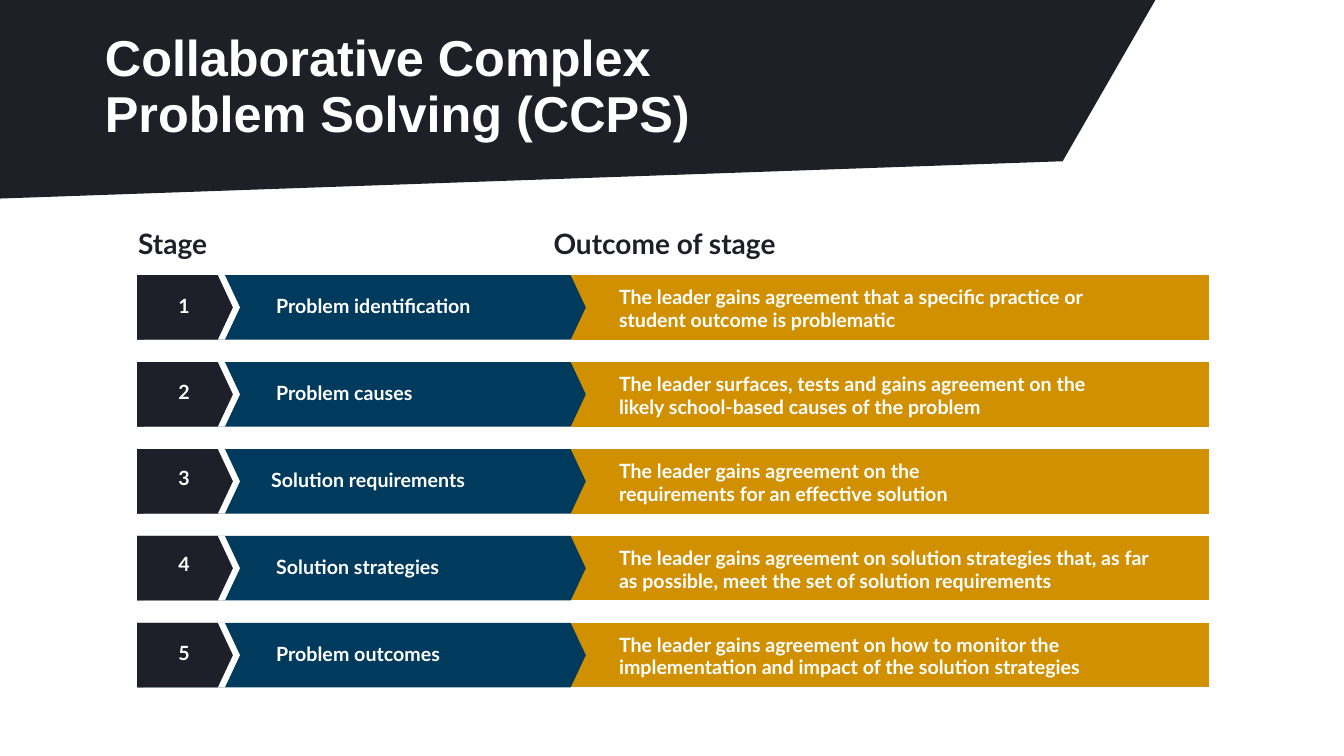
from pptx import Presentation
from pptx.dml.color import RGBColor
from pptx.enum.text import MSO_ANCHOR, PP_ALIGN
from pptx.util import Inches, Pt

MIDDLE, TOP, LEFT = MSO_ANCHOR.MIDDLE, MSO_ANCHOR.TOP, PP_ALIGN.LEFT
BANNER, INK, NAVY, GOLD, WHITE = "1E2028", "1E1F28", "003A5C", "D19000", "FFFFFF"
ROW_TOP, ROW_STEP, ROW_H, TIP = 2.73, 0.8625, 0.64, 0.15

# number offset, label left, label, outcome width, outcome
STAGES = [
    (0.18, 2.73, "Problem identification", 5.07,
     "The leader gains agreement that a specific practice or student outcome is problematic"),
    (0.17, 2.73, "Problem causes", 4.78,
     "The leader surfaces, tests and gains agreement on the likely school-based causes of the problem"),
    (0.16, 2.68, "Solution requirements", 3.7,
     "The leader gains agreement on the requirements for an effective solution"),
    (0.15, 2.73, "Solution strategies", 5.47,
     "The leader gains agreement on solution strategies that, as far as possible, "
     "meet the set of solution requirements"),
    (0.17, 2.73, "Problem outcomes", 5.25,
     "The leader gains agreement on how to monitor the implementation and impact of the solution strategies"),
]

prs = Presentation()
prs.slide_width, prs.slide_height = Inches(13.33), Inches(7.5)
s = prs.slides.add_slide(prs.slide_layouts[5])


def add_polygon(points, color):
    pts = [(Inches(x), Inches(y)) for x, y in points]
    builder = s.shapes.build_freeform(*pts[0])
    builder.add_line_segments(pts[1:], close=True)
    sp = builder.convert_to_shape()
    sp.shadow.inherit = False
    sp.fill.solid()
    sp.fill.fore_color.rgb = RGBColor.from_string(color)
    sp.line.fill.background()
    return sp


def add_text(x, y, w, h, text, size=14, color=WHITE, inset=0.01, spacing=None):
    tf = s.shapes.add_textbox(Inches(x), Inches(y), Inches(w), Inches(h)).text_frame
    tf.word_wrap = True
    tf.vertical_anchor = TOP
    tf.margin_left, tf.margin_right, tf.margin_bottom = Inches(0.01), 0, 0
    tf.margin_top = Inches(inset)
    p = tf.paragraphs[0]
    p.line_spacing = spacing
    r = p.add_run()
    r.text = text
    r.font.name, r.font.size, r.font.bold = "Lato", Pt(size), True
    r.font.color.rgb = RGBColor.from_string(color)


# Title on its banner
title = s.shapes.title
title.left, title.top = Inches(0.94), Inches(0.59)
title.width, title.height = Inches(8.78), Inches(0.54)
banner = add_polygon([(11.46, 0), (0, 0), (0, 1.97), (10.54, 1.6)], BANNER)
title.element.addprevious(banner.element)
tf = title.text_frame
tf.vertical_anchor = MIDDLE
p = tf.paragraphs[0]
p.alignment = LEFT
p.line_spacing = Pt(40)
for i, line in enumerate(("Collaborative Complex ", "Problem Solving (CCPS)")):
    if i:
        p.add_line_break()
    r = p.add_run()
    r.text = line
    r.font.name, r.font.size, r.font.bold = "Arial", Pt(36), True
    r.font.color.rgb = RGBColor.from_string(WHITE)

# Column headings
add_text(1.36, 2.24, 0.85, 0.36, "Stage", 20, INK)
add_text(5.48, 2.24, 2.51, 0.36, "Outcome of stage", 20, INK)

# Stage rows: gold bar, navy arrow, white edge and dark number arrow
for i, (number_dy, label_x, label, outcome_w, outcome) in enumerate(STAGES):
    y = ROW_TOP + i * ROW_STEP
    bottom, middle = y + ROW_H, y + ROW_H / 2
    add_polygon([(5.66, y), (11.99, y), (11.99, bottom), (5.66, bottom)], GOLD)
    for left, right, color in ((1.36, 5.66, NAVY), (1.43, 2.23, WHITE), (1.36, 2.16, INK)):
        add_polygon([(left, y), (right, y), (right + TIP, middle),
                     (right, bottom), (left, bottom)], color)
    add_text(1.76, y + number_dy, 0.15, 0.26, str(i + 1))
    add_text(label_x, y + 0.18, 2.2, 0.26, label)
    add_text(6.13, y + 0.07, outcome_w, 0.49, outcome, inset=0.03, spacing=Pt(16.4))

prs.save("out.pptx")
